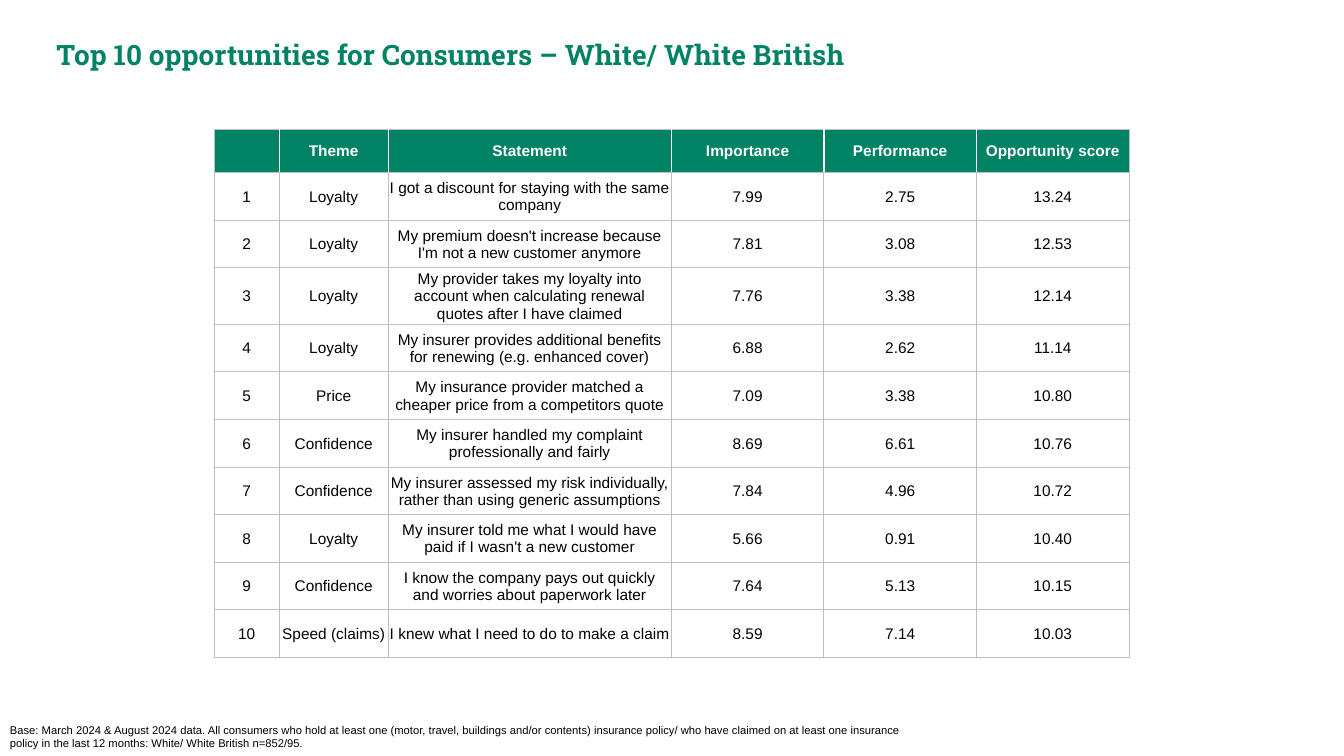
from dataclasses import dataclass

from lxml.etree import SubElement
from pptx import Presentation
from pptx.dml.color import RGBColor as Rgb
from pptx.enum.text import MSO_ANCHOR as Anchor, PP_ALIGN as Align
from pptx.oxml.ns import qn
from pptx.util import Pt


@dataclass(frozen=True)
class Theme:
    green: str = "008265"
    white: str = "FFFFFF"
    black: str = "000000"
    grid: str = "BFBFBF"
    heading_font: str = "Roboto Slab"
    body_font: str = "Arial"
    title_size: float = 20
    table_size: float = 11
    note_size: float = 8
    grid_width: float = 0.75
    divider_width: float = 1


class SlideBuilder:
    def __init__(self, slide, theme):
        self.slide = slide
        self.theme = theme

    def style(self, paragraph, font_name, size, color, bold=False):
        for run in paragraph.runs:
            run.font.name = font_name
            run.font.size = Pt(size)
            run.font.bold = bold
            run.font.color.rgb = Rgb.from_string(color)

    def text(self, wording, left, top, width, height, font_name, size, color, bold=False):
        box = self.slide.shapes.add_textbox(Pt(left), Pt(top), Pt(width), Pt(height))
        frame = box.text_frame
        frame.word_wrap = True
        frame.text = wording
        self.style(frame.paragraphs[0], font_name, size, color, bold)

    def border(self, cell, side, color, width):
        properties = cell._tc.get_or_add_tcPr()
        line = SubElement(properties, qn(f"a:ln{side}"), w=str(Pt(width)))
        fill = SubElement(line, qn("a:solidFill"))
        SubElement(fill, qn("a:srgbClr"), val=color)

    def cell(self, cell, wording, is_header, divided_sides):
        theme = self.theme
        cell.margin_left = cell.margin_right = cell.margin_top = Pt(0.72)
        cell.margin_bottom = Pt(0)
        cell.vertical_anchor = Anchor.MIDDLE
        for side in "LRTB":
            if side in divided_sides:
                self.border(cell, side, theme.white, theme.divider_width)
            else:
                self.border(cell, side, theme.grid, theme.grid_width)
        if is_header:
            cell.fill.solid()
            cell.fill.fore_color.rgb = Rgb.from_string(theme.green)
        else:
            cell.fill.background()
        cell.text_frame.text = wording
        paragraph = cell.text_frame.paragraphs[0]
        paragraph.alignment = Align.CENTER
        color = theme.white if is_header else theme.black
        self.style(paragraph, theme.body_font, theme.table_size, color, is_header)

    def table(self, rows, left, top, widths, header_height, row_height):
        heights = [header_height] + [row_height] * (len(rows) - 1)
        table = self.slide.shapes.add_table(
            len(rows), len(widths), Pt(left), Pt(top), Pt(sum(widths)), Pt(sum(heights))
        ).table
        table.horz_banding = False
        for column, width in zip(table.columns, widths):
            column.width = Pt(width)
        last = len(widths) - 1
        for r, (values, height) in enumerate(zip(rows, heights)):
            table.rows[r].height = Pt(height)
            for c, wording in enumerate(values):
                divided = ""
                if r == 0:
                    divided = ("L" if c > 0 else "") + ("R" if c < last else "")
                self.cell(table.cell(r, c), wording, r == 0, divided)


HEADER = ("", "Theme", "Statement", "Importance", "Performance", "Opportunity score")
OPPORTUNITIES = [
    ("Loyalty", "I got a discount for staying with the same company", 7.99, 2.75, 13.24),
    ("Loyalty", "My premium doesn't increase because I'm not a new customer anymore", 7.81, 3.08, 12.53),
    ("Loyalty", "My provider takes my loyalty into account when calculating renewal quotes after I have claimed",
     7.76, 3.38, 12.14),
    ("Loyalty", "My insurer provides additional benefits for renewing (e.g. enhanced cover)", 6.88, 2.62, 11.14),
    ("Price", "My insurance provider matched a cheaper price from a competitors quote", 7.09, 3.38, 10.80),
    ("Confidence", "My insurer handled my complaint professionally and fairly", 8.69, 6.61, 10.76),
    ("Confidence", "My insurer assessed my risk individually, rather than using generic assumptions",
     7.84, 4.96, 10.72),
    ("Loyalty", "My insurer told me what I would have paid if I wasn't a new customer", 5.66, 0.91, 10.40),
    ("Confidence", "I know the company pays out quickly and worries about paperwork later", 7.64, 5.13, 10.15),
    ("Speed (claims)", "I knew what I need to do to make a claim", 8.59, 7.14, 10.03),
]
BASE_NOTE = (
    "Base: March 2024 & August 2024 data. All consumers who hold at least one (motor, travel, buildings "
    "and/or contents) insurance policy/ who have claimed on at least one insurance policy in the last "
    "12 months: White/ White British n=852/95."
)


def main():
    deck = Presentation()
    deck.slide_width, deck.slide_height = Pt(960), Pt(540)
    theme = Theme()
    builder = SlideBuilder(deck.slides.add_slide(deck.slide_layouts[6]), theme)
    builder.text("Top 10 opportunities for Consumers – White/ White British", 33.2, 23, 884, 31.5,
                 theme.heading_font, theme.title_size, theme.green, bold=True)
    ranked = [
        (str(rank), topic, statement, *(f"{score:.2f}" for score in scores))
        for rank, (topic, statement, *scores) in enumerate(OPPORTUNITIES, 1)
    ]
    builder.table([HEADER] + ranked, 152.9, 92.3, [46.6, 77.8, 202.3, 109, 109, 109], 31, 34)
    builder.text(BASE_NOTE, 0, 512.8, 664.6, 27.2, theme.body_font, theme.note_size, theme.black)
    deck.save("out.pptx")


if __name__ == "__main__":
    main()
